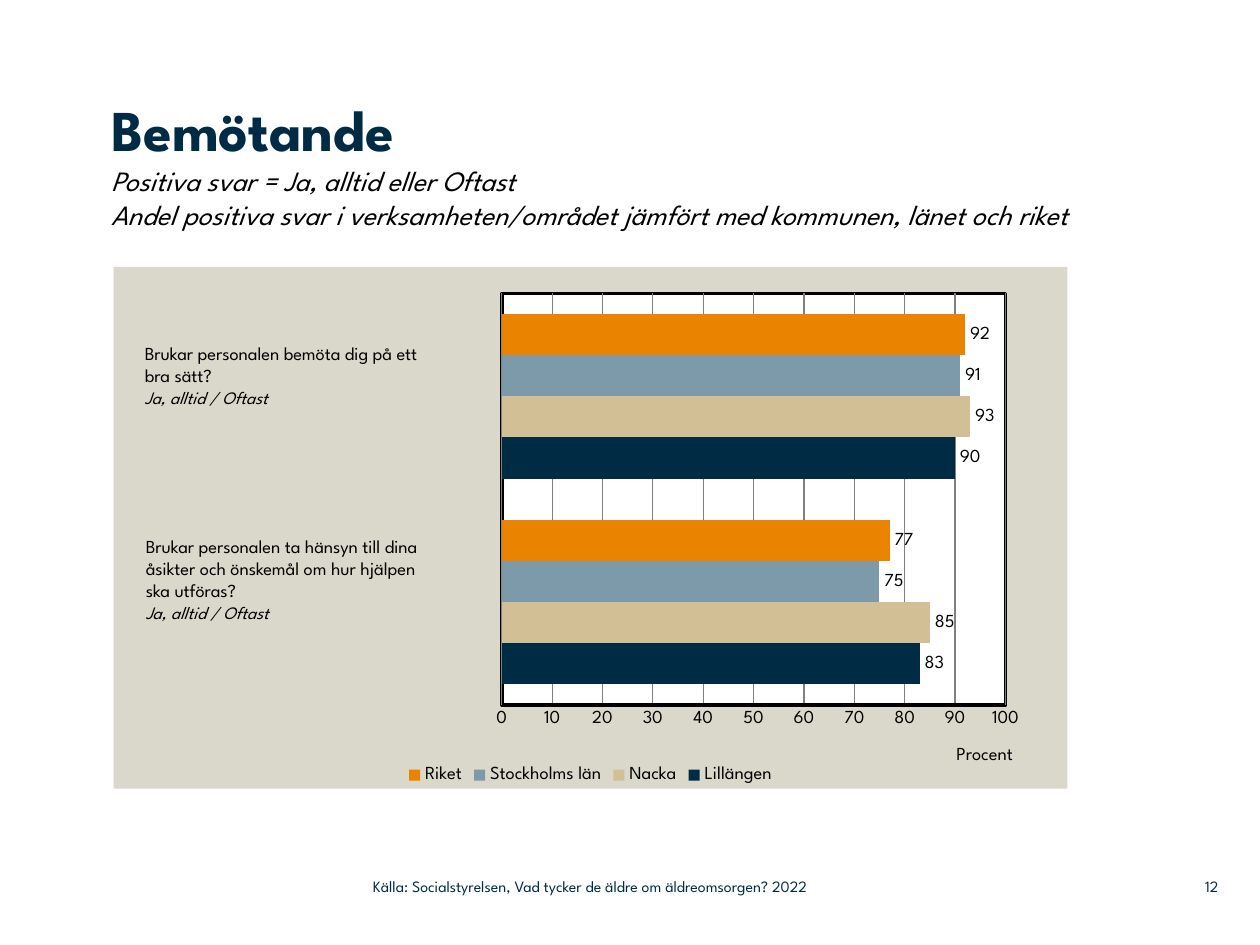
from copy import deepcopy

from lxml.etree import SubElement
from pptx import Presentation
from pptx.chart.data import CategoryChartData
from pptx.dml.color import RGBColor
from pptx.enum.chart import XL_CHART_TYPE as ChartType, XL_LABEL_POSITION as LabelPosition
from pptx.enum.chart import XL_LEGEND_POSITION as LegendPosition, XL_TICK_MARK as TickMark
from pptx.enum.text import MSO_ANCHOR as Anchor, MSO_AUTO_SIZE as AutoSize, PP_ALIGN as Align
from pptx.oxml import parse_xml
from pptx.oxml.ns import nsdecls, qn
from pptx.util import Cm, Pt

THEME = {
    "font": "League Spartan",
    "navy": "002B45", "black": "000000", "panel": "DAD7CB",
    "white": "FFFFFF", "grid": "808080",
    "heading": 33, "subheading": 16, "body": 10.5, "answer": 10, "footer": 9,
}

TITLE = "Bemötande"
SUBTITLES = [
    "Positiva svar = Ja, alltid eller Oftast",
    "Andel positiva svar i verksamheten/området jämfört med kommunen, länet och riket",
]
CATEGORIES = ["1", "2"]
SERIES = [
    ("Lillängen", (83, 90), THEME["navy"]),
    ("Nacka", (85, 93), "D3BF96"),
    ("Stockholms län", (75, 91), "7D9AAA"),
    ("Riket", (77, 92), "E98300"),
]
ANSWER = "Ja, alltid / Oftast"
QUESTIONS = [
    ((2.67, 6.78, 7.54, 2.06),
     ["Brukar personalen bemöta dig på ett", "bra sätt?"]),
    ((2.69, 10.67, 7.65, 2.49),
     ["Brukar personalen ta hänsyn till dina", "åsikter och önskemål om hur hjälpen", "ska utföras?"]),
]
FOOTERS = [
    ((7.52, 17.5, 11.25, 0.74), "Källa: Socialstyrelsen, Vad tycker de äldre om äldreomsorgen? 2022", Align.LEFT),
    ((23.37, 17.5, 1.19, 0.74), "12", Align.RIGHT),
]
TITLE_BOX = (2.24, 1.9, 20.42, 3.05)
CHART_BOX = (2.29, 5.38, 19.23, 10.52)


def color(name):
    return RGBColor.from_string(THEME.get(name, name))


def set_font(font, size, fill="black", bold=False, italic=False):
    font.name, font.size = THEME["font"], Pt(THEME[size])
    font.bold, font.italic = bold, italic
    font.color.rgb = color(fill)


def clear_margins(frame):
    frame.margin_left = frame.margin_top = frame.margin_right = frame.margin_bottom = 0


def add_text_frame(slide, box):
    frame = slide.shapes.add_textbox(*map(Cm, box)).text_frame
    frame.word_wrap = True
    return frame


def fill_title(title):
    title.left, title.top, title.width, title.height = map(Cm, TITLE_BOX)
    frame = title.text_frame
    clear_margins(frame)
    frame.auto_size = AutoSize.NONE
    frame.vertical_anchor = Anchor.TOP
    paragraph = frame.paragraphs[0]
    paragraph.alignment = Align.LEFT
    paragraph.line_spacing = 1.0
    run = paragraph.add_run()
    run.text = TITLE
    set_font(run.font, "heading", "navy", bold=True)
    for line in SUBTITLES:
        paragraph.add_line_break()
        # The break takes the size of the line that it ends
        paragraph._p[-1].append(deepcopy(run._r.rPr))
        run = paragraph.add_run()
        run.text = line
        set_font(run.font, "subheading", italic=True)


def set_layout(parent, index, **values):
    """Place a chart part by fractions of the chart's size."""
    for old in parent.findall(qn("c:layout")):
        parent.remove(old)
    layout = parse_xml(f"<c:layout {nsdecls('c')}><c:manualLayout/></c:layout>")
    for tag, value in values.items():
        SubElement(layout[0], qn(f"c:{tag}")).set("val", str(value))
    parent.insert(index, layout)


def area_format(fill, line=None):
    outline = (f'<a:ln w="{Pt(2)}"><a:solidFill><a:srgbClr val="{THEME[line]}"/></a:solidFill></a:ln>'
               if line else "<a:ln><a:noFill/></a:ln>")
    return parse_xml(f'<c:spPr {nsdecls("c", "a")}><a:solidFill><a:srgbClr val="{THEME[fill]}"/>'
                     f"</a:solidFill>{outline}</c:spPr>")


def format_value_axis(axis):
    axis.minimum_scale, axis.maximum_scale, axis.major_unit = 0, 100, 10
    axis.major_tick_mark = axis.minor_tick_mark = TickMark.NONE
    axis.has_major_gridlines = True
    gridline = axis.major_gridlines.format.line
    gridline.color.rgb, gridline.width = color("grid"), Pt(0.75)
    axis.format.line.color.rgb, axis.format.line.width = color("black"), Pt(2)
    set_font(axis.tick_labels.font, "body")
    axis.has_title = True
    paragraph = axis.axis_title.text_frame.paragraphs[0]
    run = paragraph.add_run()
    run.text = "Procent"
    set_font(run.font, "body")
    set_layout(axis.axis_title._element, 1, xMode="edge", yMode="edge", x=0.88, y=0.91)


def add_bar_chart(slide):
    data = CategoryChartData()
    data.categories = CATEGORIES
    for name, values, _ in SERIES:
        data.add_series(name, values)
    chart = slide.shapes.add_chart(ChartType.BAR_CLUSTERED, *map(Cm, CHART_BOX), data).chart
    set_font(chart.font, "body")
    chart.has_title = False
    chart.has_legend = True
    chart.legend.position = LegendPosition.BOTTOM
    chart.legend.include_in_layout = False
    set_font(chart.legend.font, "body")
    chart.category_axis.visible = False
    format_value_axis(chart.value_axis)

    plot = chart.plots[0]
    plot.gap_width, plot.overlap, plot.vary_by_categories = 100, 0, False
    for series, (_, _, fill) in zip(plot.series, SERIES):
        series.format.fill.solid()
        series.format.fill.fore_color.rgb = color(fill)
        labels = series.data_labels
        labels.show_value = True
        labels.position = LabelPosition.OUTSIDE_END
        set_font(labels.font, "body")

    chart_space = chart._chartSpace
    plot_area = chart_space.chart.plotArea
    set_layout(plot_area, 0, layoutTarget="inner", xMode="edge", yMode="edge",
               x=0.407, y=0.051, w=0.528, h=0.789)
    plot_area.append(area_format("white", "black"))
    chart_space.chart.addnext(area_format("panel"))


def add_question(slide, box, lines):
    frame = add_text_frame(slide, box)
    frame.auto_size = AutoSize.SHAPE_TO_FIT_TEXT
    frame.text = "\n".join([*lines, ANSWER])
    for paragraph in frame.paragraphs[:-1]:
        set_font(paragraph.font, "body")
    set_font(frame.paragraphs[-1].font, "answer", italic=True)


def add_footer(slide, box, text, alignment):
    frame = add_text_frame(slide, box)
    clear_margins(frame)
    frame.vertical_anchor = Anchor.MIDDLE
    paragraph = frame.paragraphs[0]
    paragraph.text, paragraph.alignment = text, alignment
    set_font(paragraph.font, "footer", "navy")


def main():
    presentation = Presentation()
    presentation.slide_width, presentation.slide_height = Cm(25.4), Cm(19.05)
    slide = presentation.slides.add_slide(presentation.slide_layouts[5])
    fill_title(slide.shapes.title)
    add_bar_chart(slide)
    for question in QUESTIONS:
        add_question(slide, *question)
    for footer in FOOTERS:
        add_footer(slide, *footer)
    presentation.save("out.pptx")


if __name__ == "__main__":
    main()
